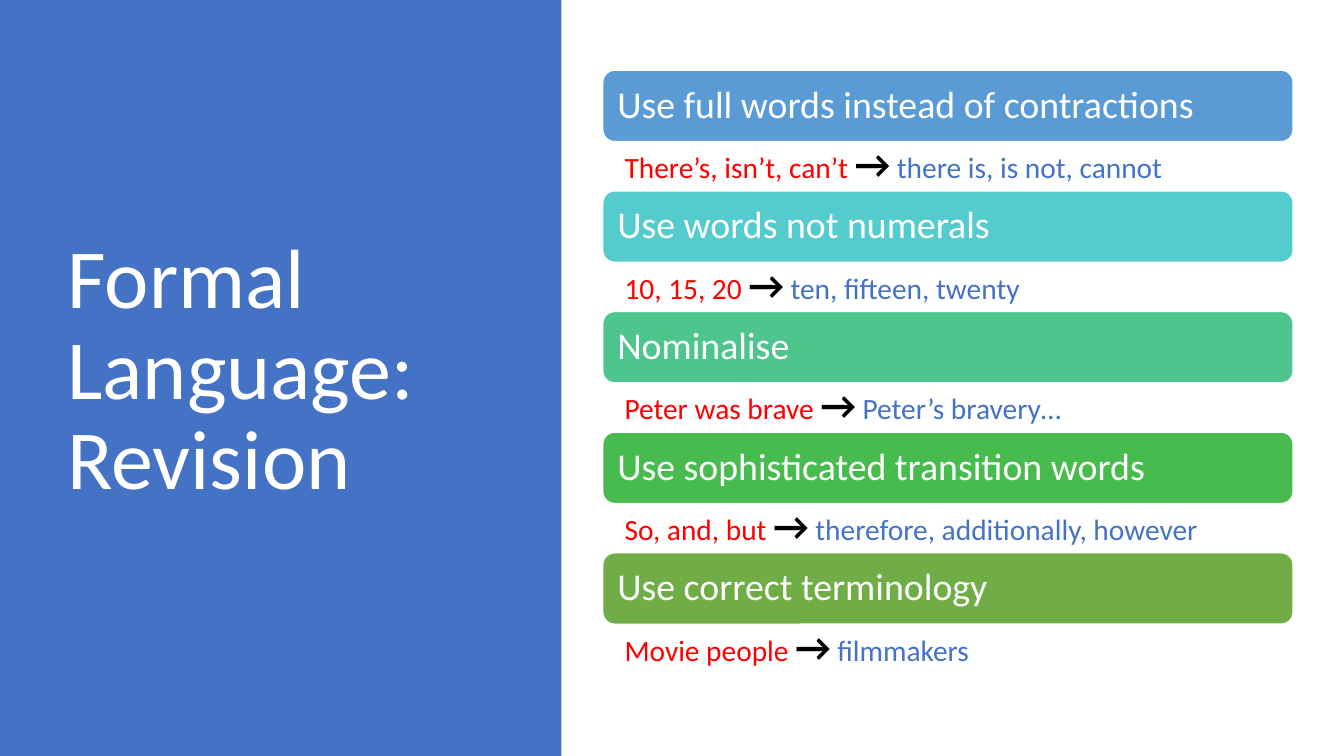
from pptx import Presentation
from pptx.dml.color import RGBColor
from pptx.enum.shapes import MSO_SHAPE
from pptx.enum.text import MSO_ANCHOR
from pptx.util import Cm, Pt

# Content
TITLE = "Formal Language: Revision"
RULES = [  # heading, informal wording, formal wording, bar colour
    ("Use full words instead of contractions", "There’s, isn’t, can’t", "there is, is not, cannot", "sky"),
    ("Use words not numerals", "10, 15, 20", "ten, fifteen, twenty", "turquoise"),
    ("Nominalise", "Peter was brave", "Peter’s bravery…", "mint"),
    ("Use sophisticated transition words", "So, and, but", "therefore, additionally, however", "green"),
    ("Use correct terminology", "Movie people", "filmmakers", "olive"),
]
COLORS = {
    "white": "FFFFFF", "black": "000000", "red": "FF0000", "blue": "4472C4",
    "sky": "5B9BD5", "turquoise": "54CCCD", "mint": "4DC58D",
    "green": "48BB4F", "olive": "70AD47",
}
FONT = "Calibri"

# Layout
SLIDE_WIDTH, SLIDE_HEIGHT = Cm(33.87), Cm(19.05)
PANEL_WIDTH = Cm(14.15)
RULES_LEFT, RULES_TOP, RULES_WIDTH = Cm(15.19), Cm(1.77), Cm(17.4)
BAR_HEIGHT, EXAMPLE_HEIGHT = Cm(1.8), Cm(1.24)


def color(name):
    return RGBColor.from_string(COLORS[name])


def add_block(slide, kind, fill, *box, line=None):
    block = slide.shapes.add_shape(kind, *box)
    block.shadow.inherit = False
    block.fill.solid()
    block.fill.fore_color.rgb = color(fill)
    if line:
        block.line.color.rgb = color(line)
        block.line.width = Pt(1)
    else:
        block.line.fill.background()
    return block


def write(shape, *runs, anchor=MSO_ANCHOR.MIDDLE, margins=(0.25, 0.13, 0.25, 0.13)):
    """Fill a shape with one paragraph; each run is (text, size, colour, bold)."""
    frame = shape.text_frame
    frame.word_wrap = True
    frame.vertical_anchor = anchor
    (frame.margin_left, frame.margin_top,
     frame.margin_right, frame.margin_bottom) = map(Cm, margins)
    paragraph = frame.paragraphs[0]
    paragraph.alignment = 1  # left
    paragraph.line_spacing = 0.9
    for text, size, shade, bold in runs:
        run = paragraph.add_run()
        run.text = text
        run.font.name = FONT
        run.font.size = Pt(size)
        run.font.bold = bold
        run.font.color.rgb = color(shade)


def main():
    deck = Presentation()
    deck.slide_width, deck.slide_height = SLIDE_WIDTH, SLIDE_HEIGHT
    slide = deck.slides.add_slide(deck.slide_layouts[6])

    # Title panel
    add_block(slide, MSO_SHAPE.RECTANGLE, "blue", 0, 0, PANEL_WIDTH, SLIDE_HEIGHT)
    title = slide.shapes.add_textbox(Cm(1.45), Cm(1.73), Cm(10.57), Cm(15.29))
    write(title, (TITLE, 60, "white", False))

    # Rules, each a bar with an example below it
    for index, (heading, informal, formal, shade) in enumerate(RULES):
        top = RULES_TOP + index * (BAR_HEIGHT + EXAMPLE_HEIGHT)
        bar = add_block(slide, MSO_SHAPE.ROUNDED_RECTANGLE, shade,
                        RULES_LEFT, top, RULES_WIDTH, BAR_HEIGHT, line="white")
        write(bar, (heading, 27, "white", False), margins=(0.28,) * 4)

        example = slide.shapes.add_textbox(RULES_LEFT, top + BAR_HEIGHT,
                                           RULES_WIDTH, EXAMPLE_HEIGHT)
        write(example,
              (informal + " ", 21, "red", False),
              ("→", 28, "black", True),
              (" " + formal, 21, "blue", False),
              anchor=MSO_ANCHOR.TOP, margins=(0.55, 0.08, 0.4, 0.08))

    deck.save("out.pptx")


if __name__ == "__main__":
    main()
